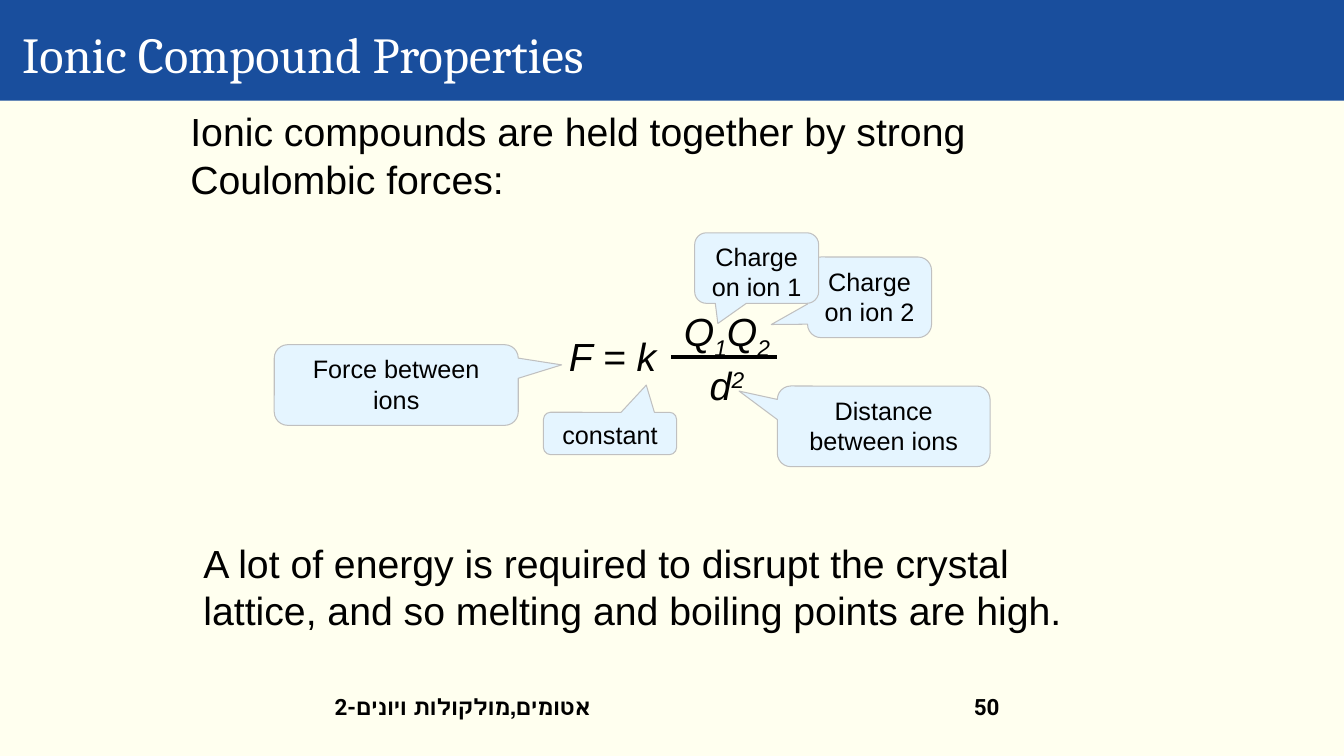
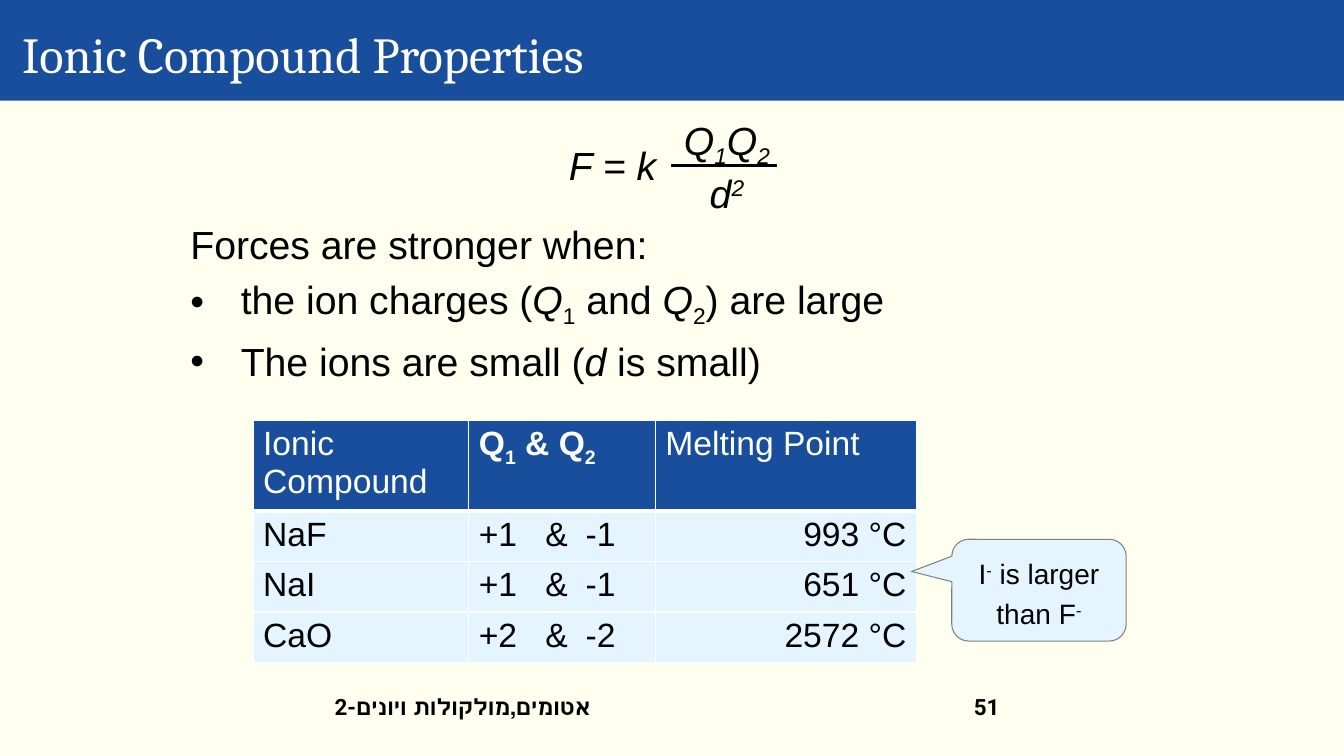
from lxml import etree
from pptx import Presentation
from pptx import util as u
from pptx.dml.color import RGBColor
from pptx.enum import shapes, text
from pptx.oxml import ns

PX = 9144  # EMU in one px, 100 px to the inch
COLORS = {
    "page": "FFFFEF", "band": "194E9D", "pale": "E5F5FF", "ink": "000000",
    "white": "FFFFFF", "silver": "C0C0C0", "gray": "808080",
}
BODY = {"name": "Arial", "size": 28, "color": "ink"}
TITLE = {"name": "Cambria", "size": 36, "color": "white"}
FOOTER = {"name": "Roboto", "size": 16, "color": "ink", "bold": True}
LABEL = BODY | {"size": 18}
NOTE = BODY | {"size": 20}
CELL = BODY | {"size": 24}
BASELINES = {"sub": -25000, "sup": 30000}

LEFT, CENTER, RIGHT = text.PP_ALIGN.LEFT, text.PP_ALIGN.CENTER, text.PP_ALIGN.RIGHT
TOP, MIDDLE = text.MSO_ANCHOR.TOP, text.MSO_ANCHOR.MIDDLE


def px(*lengths):
    return [u.Emu(length * PX) for length in lengths]


def rgb(name):
    return RGBColor.from_string(COLORS[name])


def add_xml(parent, tag, **attributes):
    return etree.SubElement(parent, ns.qn(tag), attributes)


# Text: a paragraph is a list of spans, a span is (words, marks)
def format_font(font, look):
    for key, value in look.items():
        if key == "color":
            font.color.rgb = rgb(value)
        else:
            setattr(font, key, u.Pt(value) if key == "size" else value)


def write_para(para, spans, look, **layout):
    for key, value in layout.items():
        setattr(para, key, value)
    for words, marks in spans:
        span = para.add_run()
        span.text = words
        format_font(span.font, look)
        for mark in marks.split():
            if mark == "italic":
                span.font.italic = True
            else:
                span._r.get_or_add_rPr().set("baseline", str(BASELINES[mark]))


def write_paras(frame, paras, look, gap=0, **layout):
    for index, spans in enumerate(paras):
        para = frame.add_paragraph() if index else frame.paragraphs[0]
        if index and gap:
            para.space_before = u.Pt(gap)
        write_para(para, spans, look, **layout)


def plain(words):
    return [[(words, "")]]


def add_text(page, place, paras, look, anchor=TOP, wrap=True, **layout):
    box = page.shapes.add_textbox(*px(*place))
    box.text_frame.word_wrap = wrap
    box.text_frame.vertical_anchor = anchor
    write_paras(box.text_frame, paras, look, **layout)
    return box


def add_bullet(para, indent):
    properties = para._p.get_or_add_pPr()
    properties.set("marL", str(indent * PX))
    properties.set("indent", str(-indent * PX))
    add_xml(properties, "a:buFont", typeface="Arial")
    add_xml(properties, "a:buChar", char="•")


# Shapes
def add_filled(page, kind, place, fill):
    shape = page.shapes.add_shape(kind, *px(*place))
    shape.shadow.inherit = False
    shape.fill.solid()
    shape.fill.fore_color.rgb = rgb(fill)
    shape.line.fill.background()
    return shape


def add_callout(page, place, tip, paras, look=LABEL, edge="silver", anchor=TOP, **layout):
    left, top, width, height = place
    callout = add_filled(
        page, shapes.MSO_SHAPE.ROUNDED_RECTANGULAR_CALLOUT, place, "pale")
    callout.adjustments[0] = (tip[0] - left) / width - 0.5
    callout.adjustments[1] = (tip[1] - top) / height - 0.5
    callout.line.color.rgb = rgb(edge)
    callout.line.width = u.Pt(0.75)
    callout.text_frame.word_wrap = True
    callout.text_frame.vertical_anchor = anchor
    write_paras(callout.text_frame, paras, look, alignment=CENTER, **layout)


def add_formula(page, top):
    """Coulomb's law; top is the upper edge of the fraction."""
    add_text(page, (552, top + 25, 111, 57), [[("F = k", "italic")]], BODY,
             wrap=False, alignment=CENTER)
    fraction = [
        [("Q", "italic"), ("1", "italic sub"), ("Q", "italic"), ("2", "italic sub")],
        [("d", "italic"), ("2", "italic sup")],
    ]
    add_text(page, (666, top, 110, 103), fraction, BODY, wrap=False, alignment=CENTER)
    bar = page.shapes.add_connector(
        shapes.MSO_CONNECTOR.STRAIGHT, *px(666, top + 54, 771, top + 54))
    bar.line.color.rgb = rgb("ink")
    bar.line.width = u.Pt(2.5)
    add_xml(bar._element.spPr, "a:effectLst")


# Table
def style_cell(cell, fill, is_header):
    properties = cell._tc.get_or_add_tcPr()
    for side in "LRTB":
        points = 3 if is_header and side == "B" else 1
        border = add_xml(properties, f"a:ln{side}", w=str(u.Pt(points)))
        paint = add_xml(border, "a:solidFill")
        add_xml(paint, "a:srgbClr", val=COLORS["white"])
    cell.fill.solid()
    cell.fill.fore_color.rgb = rgb(fill)


def add_tabs(para, stops):
    tabs = add_xml(para._p.get_or_add_pPr(), "a:tabLst")
    for stop in stops:
        add_xml(tabs, "a:tab", pos=str(stop * PX), algn="l")


def add_melting_table(page, left, top):
    widths, heights = (214, 185, 259), (90, 50, 50, 50)
    header = [
        [("Ionic Compound", "")],
        [("Q", ""), ("1", "sub"), (" & Q", ""), ("2", "sub")],
        [("Melting Point", "")],
    ]
    data = [
        ("NaF", "+1\t&\t-1", "993 °C"),
        ("NaI", "+1\t&\t-1", "651 °C"),
        ("CaO", "+2\t&\t-2", "2572 °C"),
    ]
    rows = [header] + [[[(words, "")] for words in row] for row in data]
    table = page.shapes.add_table(
        len(rows), len(widths), *px(left, top, sum(widths), sum(heights))).table
    for column, width in zip(table.columns, px(*widths)):
        column.width = width
    for row, height in zip(table.rows, px(*heights)):
        row.height = height
    for r, row in enumerate(rows):
        for c, spans in enumerate(row):
            cell, is_header = table.cell(r, c), r == 0
            style_cell(cell, "band" if is_header else "pale", is_header)
            para = cell.text_frame.paragraphs[0]
            if c == 1 and not is_header:
                add_tabs(para, (66, 106))
            look = CELL | {"color": "white" if is_header else "ink",
                           "bold": is_header and c == 1}
            write_para(para, spans, look,
                       alignment=RIGHT if c == 2 and not is_header else LEFT)


# Pages
def start_page(deck, number):
    page = deck.slides.add_slide(deck.slide_layouts[6])
    add_filled(page, shapes.MSO_SHAPE.RECTANGLE, (0, 0, 1333, 100), "band")
    add_text(page, (12, 8, 1288, 90), plain("Ionic Compound Properties"), TITLE,
             anchor=MIDDLE)
    add_text(page, (956, 683, 278, 50), plain(str(number)), FOOTER)
    add_text(page, (322, 683, 689, 50), plain("2-אטומים,מולקולות ויונים"), FOOTER)
    return page


def build_force_page(deck):
    page = start_page(deck, 50)
    add_text(page, (179, 102, 974, 130), plain(
        "Ionic compounds are held together by strong Coulombic forces:"), BODY)
    add_formula(page, 300)
    for place, tip, words in [
        ((272, 342, 242, 80), (557, 362), "Force between ions"),
        ((539, 409, 132, 42), (641, 382), "constant"),
        ((771, 383, 211, 80), (733, 388), "Distance between ions"),
        ((801, 255, 123, 80), (765, 322), "Charge on ion 2"),
        ((689, 231, 123, 70), (712, 321), "Charge on ion 1"),
    ]:
        add_callout(page, place, tip, plain(words))
    add_text(page, (192, 530, 937, 122), plain(
        "A lot of energy is required to disrupt the crystal lattice, "
        "and so melting and boiling points are high."), BODY)


def build_strength_page(deck):
    page = start_page(deck, 51)
    add_formula(page, 110)
    conditions = [
        [("Forces are stronger when:", "")],
        [("the ion charges (", ""), ("Q", "italic"), ("1", "sub"), (" and ", ""),
         ("Q", "italic"), ("2", "sub"), (") are large", "")],
        [("The ions are small (", ""), ("d", "italic"), (" is small)", "")],
    ]
    box = add_text(page, (179, 214, 937, 190), conditions, BODY, gap=5.6)
    for para in box.text_frame.paragraphs[1:]:
        add_bullet(para, 50)
    add_melting_table(page, 251, 417)
    remark = [[("I", ""), ("-", "sup"), (" is larger than F", ""), ("-", "sup")]]
    add_callout(page, (944, 535, 173, 101), (904, 567), remark, NOTE, "gray",
                MIDDLE, line_spacing=1.2)


def main():
    deck = Presentation()
    deck.slide_width, deck.slide_height = px(1333, 750)
    backdrop = deck.slide_master.background.fill
    backdrop.solid()
    backdrop.fore_color.rgb = rgb("page")
    build_force_page(deck)
    build_strength_page(deck)
    deck.save("out.pptx")


if __name__ == "__main__":
    main()
